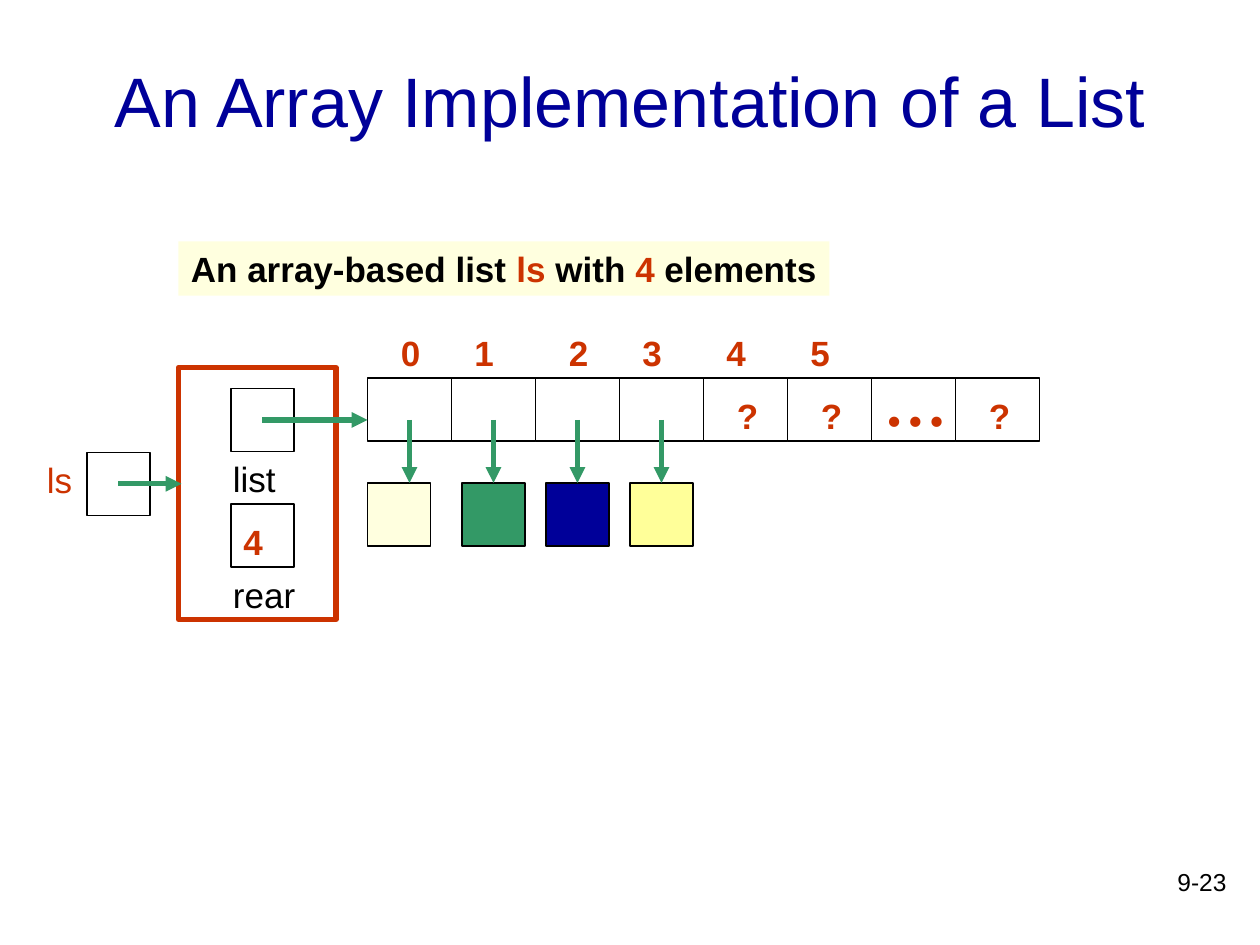
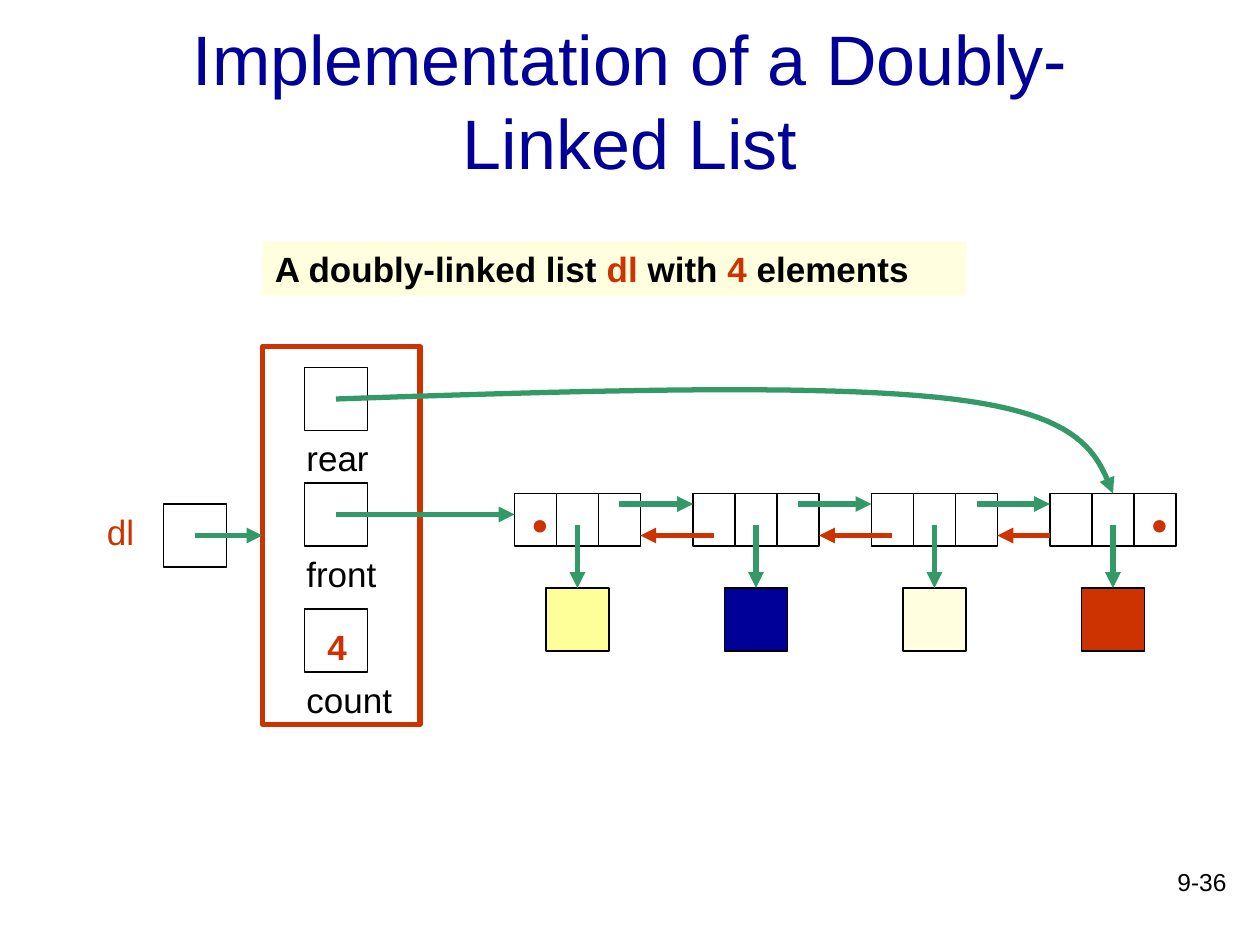
from dataclasses import dataclass
from typing import Any, Optional

from lxml.etree import SubElement
from pptx import Presentation
from pptx.dml.color import RGBColor
from pptx.enum.shapes import MSO_CONNECTOR as Connector, MSO_SHAPE as Preset
from pptx.enum.text import MSO_ANCHOR as Anchor, MSO_AUTO_SIZE as AutoSize, PP_ALIGN as Align
from pptx.oxml.ns import qn
from pptx.util import Cm, Pt

BLACK = RGBColor(0x00, 0x00, 0x00)
NAVY = RGBColor(0x00, 0x00, 0x99)
RED = RGBColor(0xCC, 0x33, 0x00)
GREEN = RGBColor(0x33, 0x99, 0x66)
CREAM = RGBColor(0xFF, 0xFF, 0xDF)
YELLOW = RGBColor(0xFF, 0xFF, 0x99)

GRID_CM = 2.54 / 12
BOX = 6
LABEL_HEIGHT = 5.16
CURVE_STEPS = 24


def grid(units: float) -> Cm:
    return Cm(units * GRID_CM)


@dataclass
class Box:
    left: float
    top: float
    width: float = BOX
    height: float = BOX
    fill: Optional[RGBColor] = None
    line: Optional[RGBColor] = BLACK
    weight: float = 0.75


@dataclass
class Label:
    text: str
    left: float
    top: float
    width: float
    height: float = LABEL_HEIGHT
    color: RGBColor = RED
    bold: bool = False
    size: float = 20
    font: str = "Arial"
    align: Align = Align.LEFT


@dataclass
class Arrow:
    left: float
    top: float
    right: float
    bottom: float
    color: RGBColor = GREEN


def apply_format(target: Any, values: dict[str, Any]) -> None:
    for name, value in values.items():
        setattr(target, name, value)


def place(shape: Any, left: float, top: float, width: float, height: float) -> None:
    apply_format(shape, {"left": grid(left), "top": grid(top),
                         "width": grid(width), "height": grid(height)})


def add_run(paragraph: Any, text: str, color: RGBColor, size: float = 20,
            bold: bool = False, font: str = "Arial") -> None:
    run = paragraph.add_run()
    run.text = text
    apply_format(run.font, {"name": font, "size": Pt(size), "bold": bold})
    run.font.color.rgb = color


def add_arrowhead(shape: Any) -> None:
    line = shape.element.spPr.find(qn("a:ln"))
    SubElement(line, qn("a:tailEnd"), type="triangle")


def draw_box(slide: Any, box: Box) -> Any:
    shape = slide.shapes.add_shape(Preset.RECTANGLE, grid(box.left), grid(box.top),
                                   grid(box.width), grid(box.height))
    shape.shadow.inherit = False
    if box.fill is None:
        shape.fill.background()
    else:
        shape.fill.solid()
        shape.fill.fore_color.rgb = box.fill
    if box.line is None:
        shape.line.fill.background()
    else:
        shape.line.color.rgb = box.line
        shape.line.width = Pt(box.weight)
    return shape


def draw_label(slide: Any, label: Label) -> None:
    text_box = slide.shapes.add_textbox(grid(label.left), grid(label.top),
                                        grid(label.width), grid(label.height))
    text_box.text_frame.word_wrap = True
    paragraph = text_box.text_frame.paragraphs[0]
    paragraph.alignment = label.align
    add_run(paragraph, label.text, label.color, label.size, label.bold, label.font)


def draw_arrow(slide: Any, arrow: Arrow, target: Any = None, site: int = 0) -> None:
    connector = slide.shapes.add_connector(
        Connector.STRAIGHT, grid(arrow.left), grid(arrow.top), grid(arrow.right), grid(arrow.bottom))
    connector.line.color.rgb = arrow.color
    connector.line.width = Pt(3)
    add_arrowhead(connector)
    SubElement(connector.element.spPr, qn("a:effectLst"))
    if target is not None:
        connector.end_connect(target, site)


def draw_curve(slide: Any, start: tuple, segments: list[tuple]) -> None:
    points = []
    first = start
    for second, third, last in segments:
        for step in range(1, CURVE_STEPS + 1):
            t = step / CURVE_STEPS
            points.append(tuple(
                grid((1 - t) ** 3 * a + 3 * (1 - t) ** 2 * t * b + 3 * (1 - t) * t ** 2 * c + t ** 3 * d)
                for a, b, c, d in zip(first, second, third, last)))
        first = last
    builder = slide.shapes.build_freeform(grid(start[0]), grid(start[1]))
    builder.add_line_segments(points, close=False)
    curve = builder.convert_to_shape()
    curve.shadow.inherit = False
    curve.fill.background()
    curve.line.color.rgb = GREEN
    curve.line.width = Pt(3)
    add_arrowhead(curve)


def draw_banner(slide: Any, left: float, width: float, parts: list[str]) -> None:
    banner = draw_box(slide, Box(left, 23, width, LABEL_HEIGHT, CREAM, None))
    apply_format(banner.text_frame, {"word_wrap": True, "vertical_anchor": Anchor.TOP,
                                     "margin_right": 0})
    paragraph = banner.text_frame.paragraphs[0]
    paragraph.alignment = Align.LEFT
    for index, part in enumerate(parts):
        add_run(paragraph, part, RED if index % 2 else BLACK, bold=True)


def draw_variable(slide: Any, name: str, left: float, top: float, label_width: float,
                  target: Any = None) -> None:
    draw_label(slide, Label(name, left - label_width, top, label_width))
    draw_box(slide, Box(left, top))
    center = top + BOX / 2
    draw_arrow(slide, Arrow(left + BOX / 2, center, left + 1.5 * BOX, center), target, 1)


def draw_record(slide: Any, left: float, top: float, height: float, field_left: float,
                fields: dict[str, float], label_width: float) -> Any:
    record = draw_box(slide, Box(left, top, 15, height, line=RED, weight=3))
    for name, field_top in fields.items():
        draw_box(slide, Box(field_left, field_top))
        draw_label(slide, Label(name, field_left - 1, field_top + BOX, label_width, color=BLACK))
    return record


def add_titled_slide(presentation: Any, title: str, number: str) -> Any:
    slide = presentation.slides.add_slide(presentation.slide_layouts[5])
    heading = slide.shapes.title
    place(heading, 9, 2, 102, 15)
    apply_format(heading.text_frame, {"word_wrap": True, "auto_size": AutoSize.NONE,
                                      "vertical_anchor": Anchor.MIDDLE})
    paragraph = heading.text_frame.paragraphs[0]
    paragraph.alignment = Align.CENTER
    add_run(paragraph, title, NAVY, 40)
    draw_label(slide, Label(number, 93, 82, 25, 6, BLACK, size=14, align=Align.RIGHT))
    return slide


def build_array_slide(presentation: Any) -> None:
    slide = add_titled_slide(presentation, "An Array Implementation of a List", "9-23")
    draw_banner(slide, 17, 62, ["An array-based list ", "ls", " with ", "4", " elements"])
    draw_record(slide, 17, 35, 24, 22, {"list": 37, "rear": 48}, 9)
    draw_label(slide, Label("4", 22, 49, 4.68, bold=True))

    cell_width = 8
    cells = [35 + cell_width * index for index in range(8)]
    for left in cells:
        draw_box(slide, Box(left, 36, cell_width))
    for index, left in enumerate([37, 44, 53, 60, 68, 76]):
        draw_label(slide, Label(str(index), left, 31, 5, bold=True))
    for index in (4, 5, 7):
        draw_label(slide, Label("?", cells[index] + 2, 37, 4.68, bold=True))
    draw_label(slide, Label("…", cells[6], 34, cell_width, 8.4, bold=True, size=36,
                            font="Times New Roman"))

    for left, color in zip([35, 44, 52, 60], [CREAM, GREEN, NAVY, YELLOW]):
        draw_box(slide, Box(left, 46, fill=color))
    for left in cells[:4]:
        center = left + cell_width / 2
        draw_arrow(slide, Arrow(center, 40, center, 46))
    draw_arrow(slide, Arrow(25, 40, cells[0], 40))
    draw_variable(slide, "ls", 8.28, 43.08, 5)


def build_doubly_linked_slide(presentation: Any) -> None:
    slide = add_titled_slide(presentation, "Implementation of a Doubly-Linked List", "9-36")
    draw_banner(slide, 25, 67, ["A doubly-linked list ", "dl", " with ", "4", " elements"])
    record = draw_record(slide, 25, 33, 36, 29, {"rear": 35, "front": 46, "count": 58}, 11)
    draw_label(slide, Label("4", 30, 59, 4.68, bold=True))

    cell_width = 4
    nodes = [49 + 17 * index for index in range(4)]
    for node, color in zip(nodes, [YELLOW, NAVY, CREAM, RED]):
        for index in range(3):
            draw_box(slide, Box(node + cell_width * index, 47, cell_width, 5))
        element = draw_box(slide, Box(node + 3, 56, fill=color))
        draw_arrow(slide, Arrow(node + 6, 50, node + 6, 56), element, 0)
    for node, following, indent in zip(nodes, nodes[1:], [2, 2, 0]):
        draw_arrow(slide, Arrow(node + 10, 48, following, 48))
        draw_arrow(slide, Arrow(following + indent, 51, node + 12, 51, RED))
    for left in (nodes[0], nodes[-1] + 2 * cell_width):
        draw_label(slide, Label(".", left, 40, cell_width, 13.2, size=60, font="Times New Roman"))

    draw_arrow(slide, Arrow(32, 49, nodes[0], 49))
    draw_curve(slide, (32, 38), [((55.2, 37.2), (78.4, 36.5), (90.7, 38)),
                                 ((103.1, 39.5), (104.5, 43.2), (106, 47))])
    draw_variable(slide, "dl", 15.6, 48, 6.6, record)


def main() -> None:
    presentation = Presentation()
    apply_format(presentation, {"slide_width": Cm(25.4), "slide_height": Cm(19.05)})
    build_array_slide(presentation)
    build_doubly_linked_slide(presentation)
    presentation.save("out.pptx")


if __name__ == "__main__":
    main()
